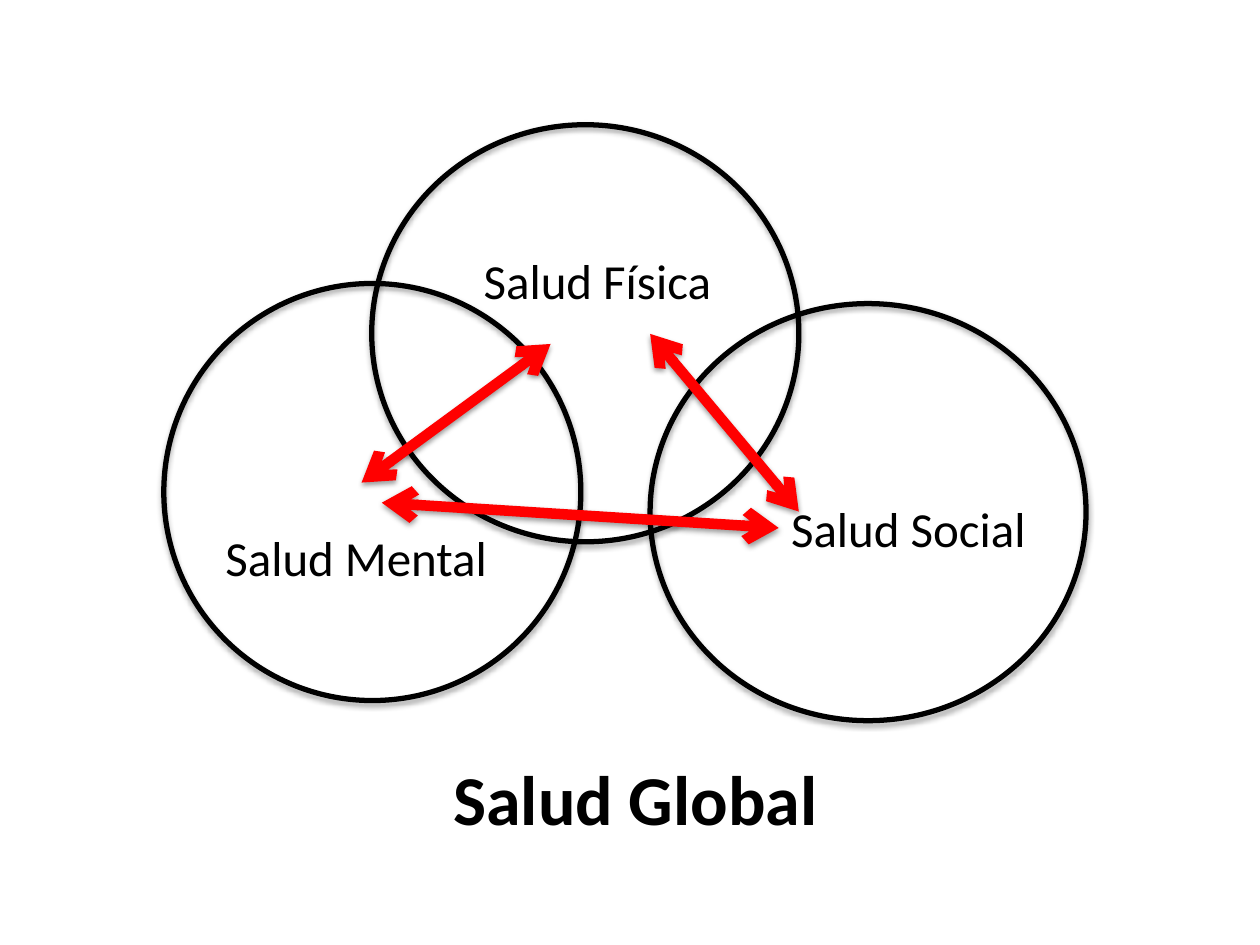
"""Build the Salud Global slide: three overlapping circles linked by arrows."""
from lxml import etree
from pptx import Presentation
from pptx import util as u
from pptx.dml.color import RGBColor
from pptx.enum import shapes, text
from pptx.oxml.ns import qn

COLORS = {"ink": "000000", "arrow": "FF0000"}
FONT = "Calibri"
WIDTH, HEIGHT = u.Inches(10), u.Inches(7.5)
COLUMNS = 100
CELL = WIDTH / COLUMNS

CIRCLES = [
    (29.5, 9.9, 33.9, 33.1),
    (51.6, 24.1, 34.6, 33.1),
    (13, 22.5, 33.1, 33.1),
]
LABELS = [
    ("Salud Física", (37.4, 19.4, 20.3, 5.7), 28, False),
    ("Salud Social", (61.8, 39.1, 20.8, 5.7), 28, False),
    ("Salud Mental", (16.9, 41.4, 23.1, 5.7), 28, False),
    ("Salud Global", (35, 59.5, 31.2, 7.7), 40, True),
]
ARROWS = [
    (43.7, 27.3, 28.7, 38.3),
    (61.8, 41.9, 30.3, 39.9),
    (51.6, 26.5, 63.4, 40.6),
]


def cells(values):
    return [u.Emu(round(v * CELL)) for v in values]


def rgb(name):
    return RGBColor.from_string(COLORS[name])


def set_line(sp, color, width):
    sp.line.color.rgb = rgb(color)
    sp.line.width = u.Pt(width)


def add_shadow(sp, distance, opacity):
    effects = etree.SubElement(sp._element.spPr, qn("a:effectLst"))
    shadow = etree.SubElement(
        effects, qn("a:outerShdw"), blurRad=str(u.Pt(3.1)),
        dist=str(u.Pt(distance)), dir=str(90 * 60000), rotWithShape="0")
    color = etree.SubElement(shadow, qn("a:srgbClr"), val=COLORS["ink"])
    etree.SubElement(color, qn("a:alpha"), val=str(opacity * 1000))


def add_circle(slide, box):
    sp = slide.shapes.add_shape(shapes.MSO_SHAPE.OVAL, *cells(box))
    sp.fill.background()
    set_line(sp, "ink", 3)
    add_shadow(sp, 1.8, 35)


def add_label(slide, words, box, size, bold):
    tf = slide.shapes.add_textbox(*cells(box)).text_frame
    tf.text = words
    tf.word_wrap = False
    tf.auto_size = text.MSO_AUTO_SIZE.SHAPE_TO_FIT_TEXT
    font = tf.paragraphs[0].runs[0].font
    font.name, font.size, font.bold = FONT, u.Pt(size), bold
    font.color.rgb = rgb("ink")


def add_arrow(slide, ends):
    sp = slide.shapes.add_connector(shapes.MSO_CONNECTOR.STRAIGHT, *cells(ends))
    set_line(sp, "arrow", 6)
    ln = sp.line._get_or_add_ln()
    for end in ("a:headEnd", "a:tailEnd"):
        etree.SubElement(ln, qn(end), type="arrow")
    add_shadow(sp, 1.6, 38)


def main():
    prs = Presentation()
    prs.slide_width, prs.slide_height = WIDTH, HEIGHT
    s = prs.slides.add_slide(prs.slide_layouts[6])
    for box in CIRCLES:
        add_circle(s, box)
    for label in LABELS:
        add_label(s, *label)
    for ends in ARROWS:
        add_arrow(s, ends)
    prs.save("out.pptx")


if __name__ == "__main__":
    main()
